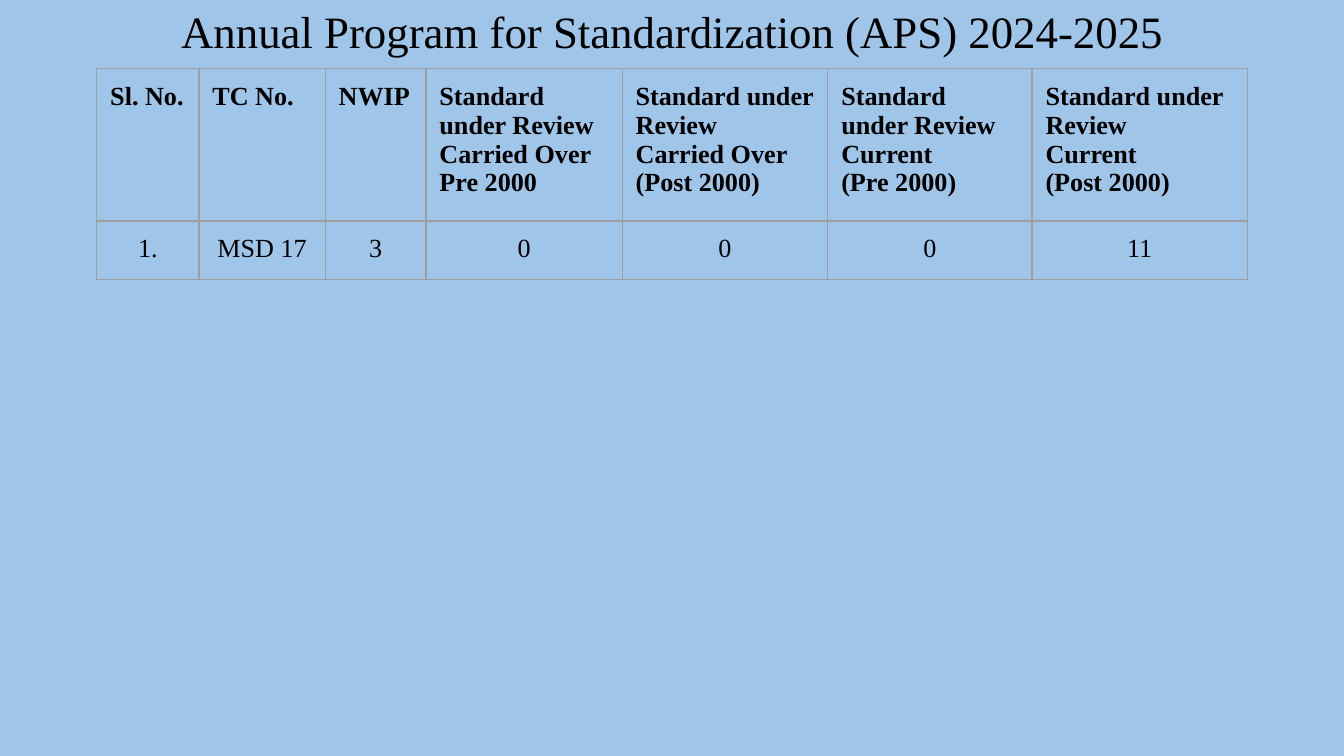
from dataclasses import dataclass

from lxml import etree
from pptx import Presentation
from pptx.dml.color import RGBColor
from pptx.enum.text import MSO_ANCHOR, PP_ALIGN
from pptx.oxml.ns import qn
from pptx.util import Inches, Pt

CENTER, LEFT = PP_ALIGN.CENTER, PP_ALIGN.LEFT
MIDDLE, TOP = MSO_ANCHOR.MIDDLE, MSO_ANCHOR.TOP

BLACK = RGBColor(0x00, 0x00, 0x00)
SKY = RGBColor(0x9F, 0xC5, 0xE8)
GRID = RGBColor(0x9E, 0x9E, 0x9E)
FONT = "Times New Roman"

SLIDE_W = 10
SLIDE_H = SLIDE_W * 9 / 16
MARGIN = 0.72
TITLE_H = 0.51
ROW_COUNT = 2
MIN_ROW_H = 0.42
FRAME_SIDE = 3.28
CELL_INSET = 0.1
BORDER_PT = 0.75


@dataclass(frozen=True)
class Column:
    width: float
    heading: tuple[str, ...]
    value: str


REVIEW = "Standard under Review"
COLUMNS = (
    Column(0.76, ("Sl. No.",), "1."),
    Column(0.94, ("TC No.",), "MSD 17"),
    Column(0.75, ("NWIP",), "3"),
    Column(1.46, (REVIEW, "Carried Over", "Pre 2000"), "0"),
    Column(1.53, (REVIEW, "Carried Over", "(Post 2000)"), "0"),
    Column(1.52, (REVIEW, "Current", "(Pre 2000)"), "0"),
    Column(1.6, (REVIEW, "Current", "(Post 2000)"), "11"),
)


def write_lines(tf, lines: tuple[str, ...], size: float, align, bold: bool = False) -> None:
    tf.word_wrap = True
    for i, line in enumerate(lines):
        p = tf.add_paragraph() if i else tf.paragraphs[0]
        p.alignment = align
        r = p.add_run()
        r.text = line
        r.font.name = FONT
        r.font.size = Pt(size)
        r.font.bold = bold
        r.font.color.rgb = BLACK


def add_borders(cell) -> None:
    """Line all four sides; the lines must come before the fill in tcPr."""
    tc_pr = cell._tc.get_or_add_tcPr()
    for i, side in enumerate(("lnL", "lnR", "lnT", "lnB")):
        ln = etree.Element(qn(f"a:{side}"), w=str(Pt(BORDER_PT)))
        fill = etree.SubElement(ln, qn("a:solidFill"))
        etree.SubElement(fill, qn("a:srgbClr"), val=str(GRID))
        tc_pr.insert(i, ln)


def fill_cell(cell, lines: tuple[str, ...], align, bold: bool) -> None:
    cell.margin_left = cell.margin_right = Inches(CELL_INSET)
    cell.margin_top = cell.margin_bottom = Inches(CELL_INSET)
    cell.vertical_anchor = TOP
    cell.fill.background()
    add_borders(cell)
    write_lines(cell.text_frame, lines, 14, align, bold)


def add_title(s, text: str) -> None:
    sp = s.shapes.add_textbox(Inches(MARGIN), 0, Inches(SLIDE_W - 2 * MARGIN), Inches(TITLE_H))
    tf = sp.text_frame
    tf.margin_left = tf.margin_right = Inches(0.07)
    tf.margin_top = tf.margin_bottom = Inches(0.04)
    tf.vertical_anchor = MIDDLE
    write_lines(tf, (text,), 24, CENTER)
    tf.paragraphs[0].line_spacing = 0.9


def add_program_table(s) -> None:
    """Rows start at their least height and grow with their text."""
    frame = s.shapes.add_table(
        ROW_COUNT, len(COLUMNS), Inches(MARGIN), Inches(TITLE_H),
        Inches(FRAME_SIDE), Inches(FRAME_SIDE),
    )
    table = frame.table
    table.first_row = table.horz_banding = False
    for row in table.rows:
        row.height = Inches(MIN_ROW_H)
    for i, column in enumerate(COLUMNS):
        table.columns[i].width = Inches(column.width)
        fill_cell(table.cell(0, i), column.heading, LEFT, True)
        fill_cell(table.cell(1, i), (column.value,), CENTER, False)
    frame.width = frame.height = Inches(FRAME_SIDE)


def main() -> None:
    prs = Presentation()
    prs.slide_width, prs.slide_height = Inches(SLIDE_W), Inches(SLIDE_H)
    s = prs.slides.add_slide(prs.slide_layouts[6])
    s.background.fill.solid()
    s.background.fill.fore_color.rgb = SKY
    add_title(s, "Annual Program for Standardization (APS) 2024-2025")
    add_program_table(s)
    prs.save("out.pptx")


if __name__ == "__main__":
    main()
